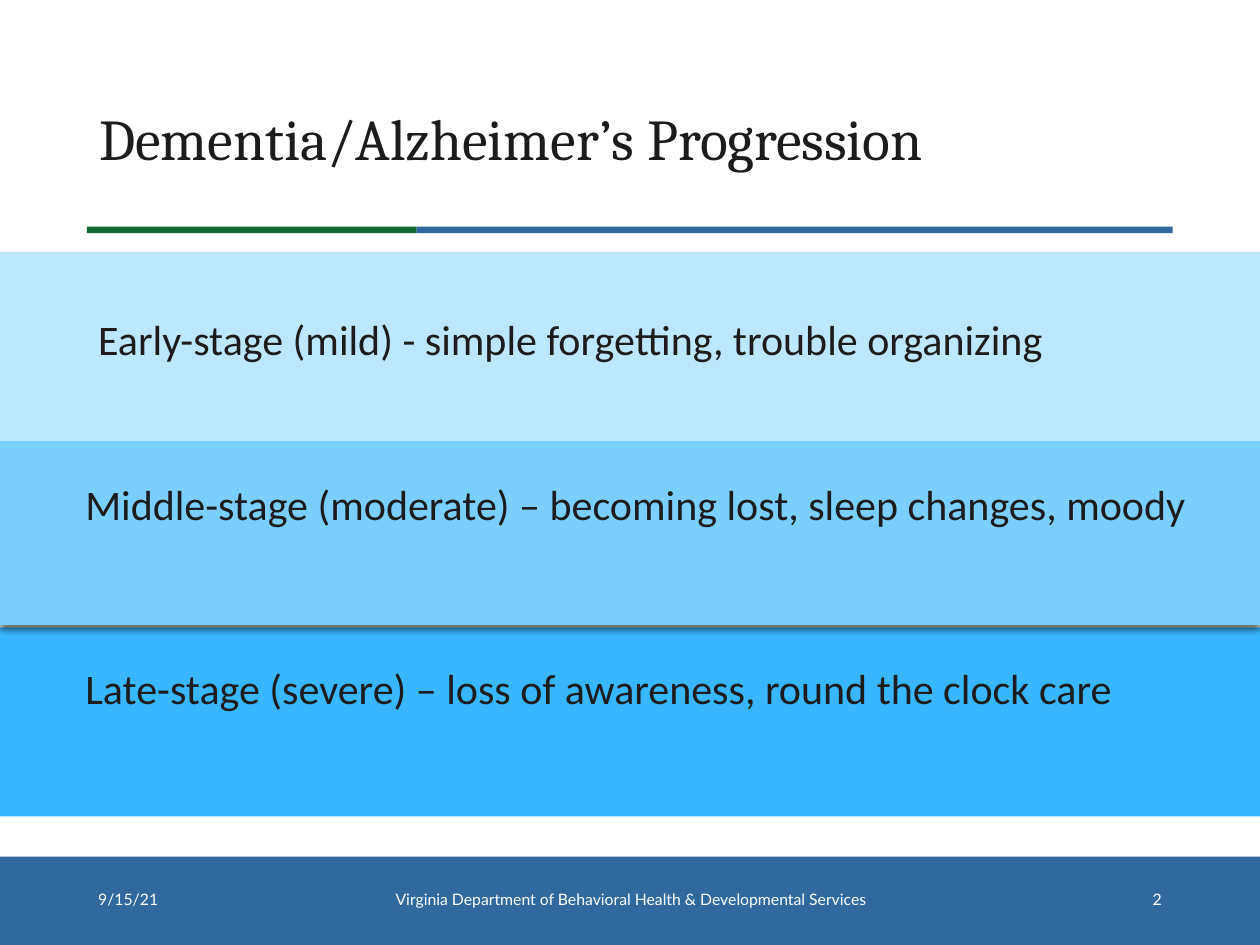
from lxml import etree
from pptx import Presentation
from pptx.dml.color import RGBColor
from pptx.enum.shapes import MSO_SHAPE as SHAPE
from pptx.enum.text import MSO_ANCHOR as ANCHOR, PP_ALIGN as ALIGN
from pptx.oxml import parse_xml
from pptx.oxml.ns import nsdecls, qn
from pptx.util import Cm, Pt

COLORS = {
    "ink": "1C1C1C",
    "white": "FFFFFF",
    "navy": "30699D",
    "green": "136734",
    "early": "BDE7FF",
    "middle": "7ACFFF",
    "late": "38B7FF",
}
SLIDE_W, SLIDE_H = 25.4, 19.05
BAND_H = 3.81

# Colour, band top, text left, text top, text width, wording
STAGES = [
    ("early", 5.08, 1.73, 6.2, 19.76,
     "Early-stage (mild) - simple forgetting, trouble organizing"),
    ("middle", 8.79, 1.47, 9.52, 23.09,
     "Middle-stage (moderate) – becoming lost, sleep changes, moody"),
    ("late", 12.65, 1.47, 13.23, 21.41,
     "Late-stage (severe) – loss of awareness, round the clock care"),
]
FOOTER = [
    (1.73, 5.74, ALIGN.LEFT, "9/15/21"),
    (7.47, 10.49, ALIGN.CENTER,
     "Virginia Department of Behavioral Health & Developmental Services"),
    (17.93, 5.74, ALIGN.RIGHT, "2"),
]


def rgb(name):
    return RGBColor.from_string(COLORS[name])


def add_rect(s, x, y, w, h, color):
    sp = s.shapes.add_shape(SHAPE.RECTANGLE, Cm(x), Cm(y), Cm(w), Cm(h))
    sp.shadow.inherit = False
    sp.fill.solid()
    sp.fill.fore_color.rgb = rgb(color)
    sp.line.fill.background()
    return sp


def add_drop_shadow(sp):
    effects = sp._element.spPr.find(qn("a:effectLst"))
    effects.append(parse_xml(
        f'<a:outerShdw {nsdecls("a")} blurRad="{Pt(4.5)}" dist="{Pt(1.5)}" '
        'dir="5400000" rotWithShape="0"><a:srgbClr val="000000">'
        '<a:alpha val="63000"/></a:srgbClr></a:outerShdw>'))


def add_text(s, text, x, y, w, h, *, size, font, color="ink", wrap=True,
             align=ALIGN.LEFT, anchor=ANCHOR.MIDDLE, spacing=0.9):
    tf = s.shapes.add_textbox(Cm(x), Cm(y), Cm(w), Cm(h)).text_frame
    tf.word_wrap = wrap
    tf.vertical_anchor = anchor
    p = tf.paragraphs[0]
    p.alignment = align
    p.line_spacing = spacing
    r = p.add_run()
    r.text = text
    r.font.size = Pt(size)
    r.font.name = font
    r.font.color.rgb = rgb(color)


def add_title(s):
    add_text(s, "Dementia/Alzheimer’s Progression", 1.75, 1.02, 21.9, 3.68,
             size=33, font="Cambria")
    add_rect(s, 1.75, 4.57, 6.65, 0.13, "green")
    add_rect(s, 8.4, 4.57, 15.24, 0.13, "navy")


def add_stages(s):
    # Drawn from the bottom up, so that each band overlaps the one below it
    for color, top, *_ in reversed(STAGES):
        band = add_rect(s, 0, top, SLIDE_W, BAND_H, color)
        if color == "middle":
            add_drop_shadow(band)
    for _, _, x, y, w, text in STAGES:
        add_text(s, text, x, y, w, 1.27, size=24, font="Calibri",
                 wrap=False, anchor=ANCHOR.TOP, spacing=1.0)


def add_footer(s):
    add_rect(s, 0, 17.27, SLIDE_W, 1.78, "navy")
    for x, w, align, text in FOOTER:
        add_text(s, text, x, 17.63, w, 1.04, size=9, font="Lato",
                 color="white", align=align)


def main():
    prs = Presentation()
    prs.slide_width, prs.slide_height = Cm(SLIDE_W), Cm(SLIDE_H)
    s = prs.slides.add_slide(prs.slide_layouts[6])
    add_title(s)
    add_stages(s)
    add_footer(s)
    prs.save("out.pptx")


if __name__ == "__main__":
    main()
